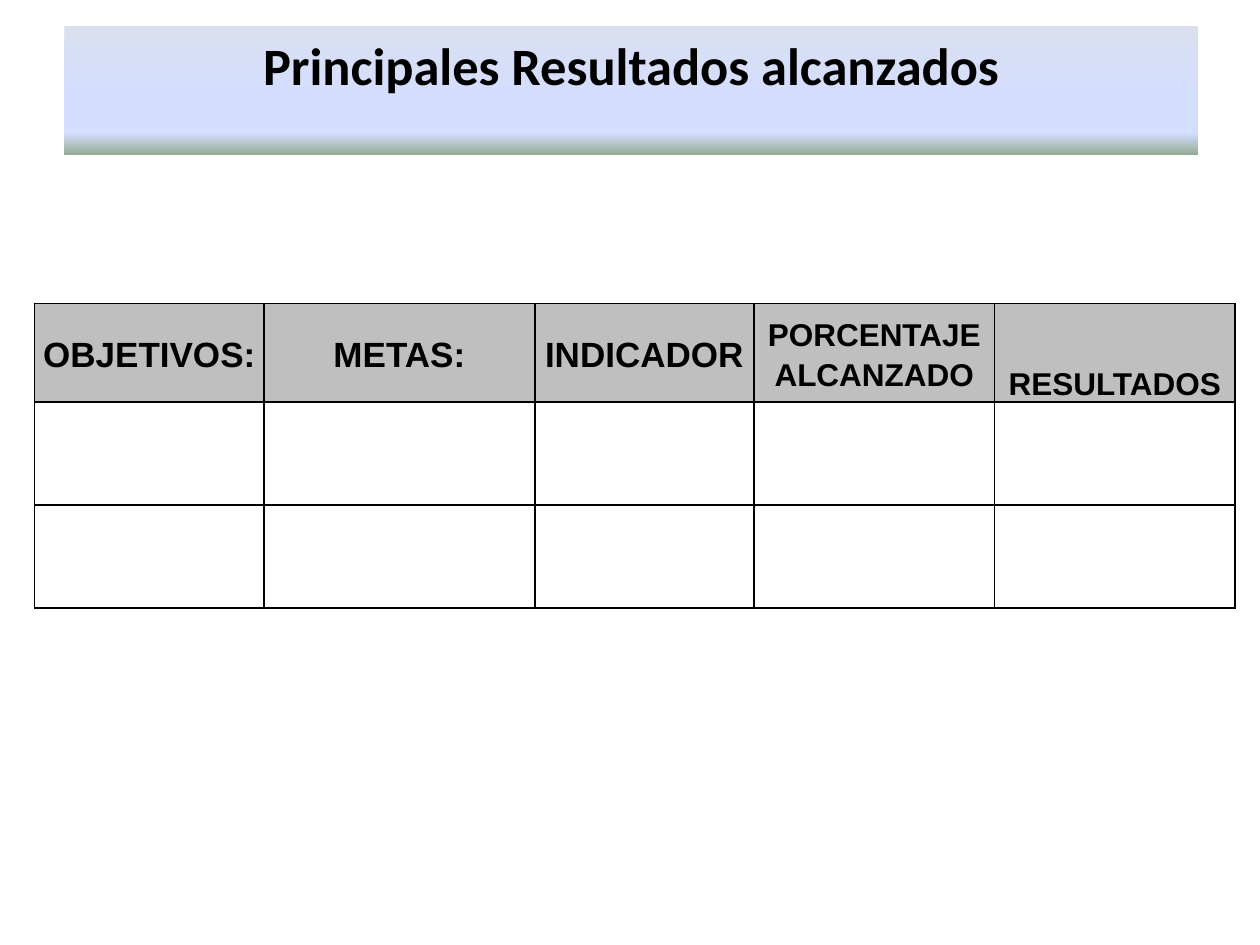
from lxml.etree import SubElement
from pptx import Presentation
from pptx.dml.color import RGBColor
from pptx.enum.text import MSO_ANCHOR, MSO_AUTO_SIZE, PP_ALIGN
from pptx.oxml import parse_xml
from pptx.oxml.ns import nsdecls, qn
from pptx.util import Cm, Pt

BLACK = RGBColor(0x00, 0x00, 0x00)
HEADER_GRAY = RGBColor(0xBF, 0xBF, 0xBF)
PALE_BLUE = RGBColor(0xDA, 0xE0, 0xEF)
LIGHT_BLUE = RGBColor(0xD4, 0xDE, 0xFF)
SAGE = RGBColor(0x96, 0xAB, 0x94)


def write_text(frame, text, *, size, font, line_spacing=1.0, space_after=0):
    para = frame.paragraphs[0]
    para.alignment = PP_ALIGN.CENTER
    para.line_spacing = line_spacing
    para.space_after = Pt(space_after)
    span = para.add_run()
    span.text = text
    span.font.size = Pt(size)
    span.font.name = font
    span.font.bold = True
    span.font.color.rgb = BLACK


def add_borders(cell, color, width):
    properties = cell._tc.get_or_add_tcPr()
    for position, side in enumerate(("lnL", "lnR", "lnT", "lnB")):
        line = parse_xml(f'<a:{side} {nsdecls("a")} w="{Pt(width)}"/>')
        fill = SubElement(line, qn("a:solidFill"))
        SubElement(fill, qn("a:srgbClr"), val=str(color))
        properties.insert(position, line)


deck = Presentation()
deck.slide_width = Cm(25.4)
deck.slide_height = Cm(19.05)
page = deck.slides.add_slide(deck.slide_layouts[5])

title = page.shapes.title
title.left, title.top = Cm(1.3), Cm(0.53)
title.width, title.height = Cm(22.86), Cm(2.59)
title.text_frame.auto_size = MSO_AUTO_SIZE.NONE
title.text_frame.vertical_anchor = MSO_ANCHOR.TOP
write_text(title.text_frame, "Principales Resultados alcanzados", size=30, font="Calibri")

gradient = parse_xml(f'<a:gradFill {nsdecls("a")} rotWithShape="1"/>')
stops = SubElement(gradient, qn("a:gsLst"))
for percent, color in ((0, PALE_BLUE), (53, LIGHT_BLUE), (83, LIGHT_BLUE), (100, SAGE)):
    stop = SubElement(stops, qn("a:gs"), pos=str(percent * 1000))
    SubElement(stop, qn("a:srgbClr"), val=str(color))
SubElement(gradient, qn("a:lin"), ang=str(90 * 60000), scaled="0")
title._element.spPr.append(gradient)

columns = (
    ("OBJETIVOS:", 4.62, 20, MSO_ANCHOR.MIDDLE),
    ("METAS:", 5.46, 20, MSO_ANCHOR.MIDDLE),
    ("INDICADOR", 4.42, 20, MSO_ANCHOR.MIDDLE),
    ("PORCENTAJE ALCANZADO", 4.85, 18, MSO_ANCHOR.MIDDLE),
    ("RESULTADOS", 4.85, 18, MSO_ANCHOR.BOTTOM),
)
row_heights = (1.98, 2.08, 2.08)

table = page.shapes.add_table(
    len(row_heights), len(columns), Cm(0.7), Cm(6.12),
    Cm(sum(column[1] for column in columns)), Cm(sum(row_heights)),
).table
table.first_row = False
table.horz_banding = False

for row, height in zip(table.rows, row_heights):
    row.height = Cm(height)

for index, (heading, width, size, anchor) in enumerate(columns):
    table.columns[index].width = Cm(width)
    header = table.cell(0, index)
    header.vertical_anchor = anchor
    header.margin_left = header.margin_right = Cm(0.15)
    header.margin_top = header.margin_bottom = Cm(0)
    write_text(header.text_frame, heading, size=size, font="Arial",
               line_spacing=1.15, space_after=10)
    header.fill.solid()
    header.fill.fore_color.rgb = HEADER_GRAY
    for row_index in range(1, len(row_heights)):
        table.cell(row_index, index).fill.background()

for cell in table.iter_cells():
    add_borders(cell, BLACK, 1)

deck.save("out.pptx")
